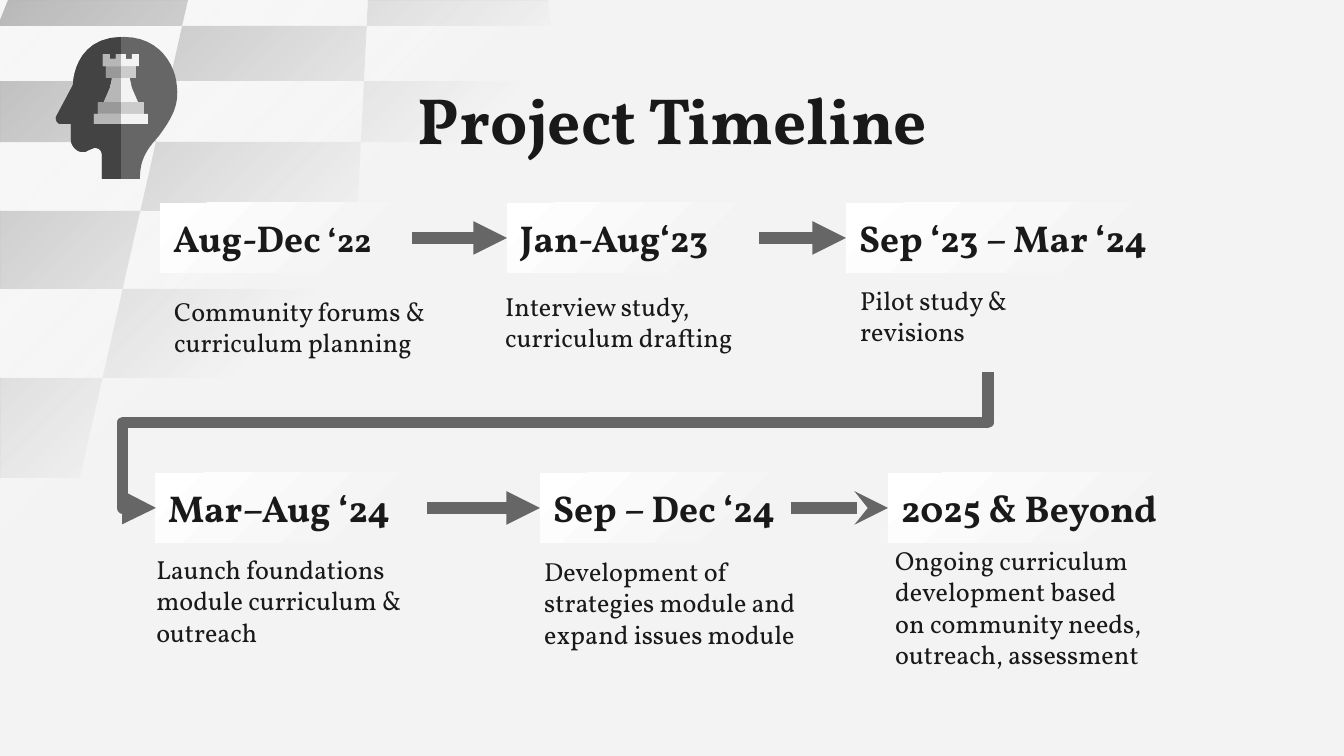
from lxml import etree
from pptx import Presentation
from pptx import util as u
from pptx.dml.color import RGBColor
from pptx.enum import shapes, text
from pptx.oxml.ns import qn

PX = 9144000 / 1344
FONT = "Vollkorn"
INK, LINE, PALE, WHITE = "191919", "666666", "F3F3F3", "FFFFFF"


def px(value):
    return u.Emu(round(value * PX))


def color(value):
    return RGBColor.from_string(value)


deck = Presentation()
deck.slide_width, deck.slide_height = px(1344), px(756)
page = deck.slides.add_slide(deck.slide_layouts[6])
page.background.fill.solid()
page.background.fill.fore_color.rgb = color(PALE)
outlines = []

# Chessboard in perspective: column lines spread out as the rows go down
rows = [0, 26, 81, 142, 211, 289, 378, 478]
for row, (top, bottom) in enumerate(zip(rows, rows[1:])):
    for column in range(-2 + row % 2, 1, 2):
        corners = [(column, top), (column, bottom), (column + 1, bottom), (column + 1, top)]
        tile = [(368 - 0.05 * y + k * (180 + 0.176 * y), y) for k, y in corners]
        outlines.append((tile, "999999"))
tile_count = len(outlines)

# Head: a pair is a corner, a triple of pairs is a Bezier curve
face = [
    (102, 179), (102, 156), ((102, 150), (99, 148), (94, 148)),
    (87, 151), ((86, 152), (85, 152), (82, 152)), ((77, 152), (71, 146), (71, 140)),
    (71, 124), (60, 124), ((58, 124), (55, 120), (56, 117)), (73, 85),
]
back = [
    (124, 37), ((160, 37), (176, 66), (177, 87)),
    ((179, 106), (172, 118), (159, 136)), ((144, 152), (140, 163), (140, 179)),
]
head = back + face + [((73, 85), (73, 37), (124, 37))]
profile = [(121, 37), (121, 179)] + face + [((73, 85), (73, 38), (121, 37))]
for curves, shade in ((head, LINE), (profile, "434343")):
    points = []
    for part in curves:
        if len(part) == 2:
            points.append(part)
            continue
        controls = [points[-1], *part]
        for step in range(1, 13):
            t = step / 12
            weights = [(1 - t) ** 3, 3 * t * (1 - t) ** 2, 3 * t * t * (1 - t), t ** 3]
            points.append(tuple(sum(w * c[axis] for w, c in zip(weights, controls))
                                for axis in (0, 1)))
    outlines.append((points, shade))

# Rook: each left half is mirrored about x = 121 for the full piece
rook = [
    ([(121, 71), (112, 71), (112, 79), (110, 88), (104, 102), (103, 107), (121, 107)],
     PALE, "B7B7B7"),
    ([(121, 102), (98, 102), (98, 114), (121, 114)], "CCCCCC", "999999"),
    ([(121, 114), (94, 114), (94, 124), (121, 124)], PALE, "B7B7B7"),
    ([(121, 66), (106, 66), (106, 78), (121, 78)], "CCCCCC", "999999"),
    ([(121, 54), (116, 54), (116, 59), (110, 59), (110, 54), (103, 54), (103, 66), (121, 66)],
     PALE, "B7B7B7"),
]
for half, light, dark in rook:
    mirrored = [(242 - x, y) for x, y in reversed(half)]
    outlines += [(half + mirrored, light), (half, dark)]

for index, (points, shade) in enumerate(outlines):
    if index == tile_count:
        # Veil that fades the board into the background
        veil = page.shapes.add_shape(shapes.MSO_SHAPE.RECTANGLE, 0, 0, px(1344), px(756))
        veil.shadow.inherit = False
        veil.line.fill.background()
        veil.fill.gradient()
        veil.fill.gradient_angle = 315
        for stop, shade_stop, position in zip(veil.fill.gradient_stops, (WHITE, PALE), (0, 0.29)):
            stop.color.rgb = color(shade_stop)
            stop.position = position
        clear = next(veil._element.iter(qn("a:srgbClr")))
        etree.SubElement(clear, qn("a:alpha")).set("val", "30000")
    spots = [(px(x), px(y)) for x, y in points]
    builder = page.shapes.build_freeform(*spots[0], scale=1.0)
    builder.add_line_segments(spots[1:], close=True)
    outline = builder.convert_to_shape()
    outline.shadow.inherit = False
    outline.fill.solid()
    outline.fill.fore_color.rgb = color(shade)
    outline.line.fill.background()

# Period boxes: left, top, width, runs; then the note's left, top and wording
periods = [
    (160, 203, 252, [("Aug-Dec", 20), (" ‘22", 18)],
     161, 282, "Community forums & curriculum planning"),
    (507, 203, 252, [("Jan-Aug‘23", 20)],
     492, 277, "Interview study, curriculum drafting"),
    (846, 203, 328, [("Sep ‘23 – Mar ‘24", 20)],
     847, 271, "Pilot study & revisions"),
    (155, 473, 272, [("Mar–Aug ‘24", 20)],
     143, 540, "Launch foundations module curriculum & outreach"),
    (540, 473, 251, [("Sep – Dec ‘24", 20)],
     531, 542, "Development of strategies module and expand issues module"),
    (888, 473, 300, [("2025 & Beyond", 20)],
     882, 531, "Ongoing curriculum development based on community needs, outreach, assessment"),
]
title = page.shapes.add_textbox(px(106), px(66), px(1133), px(85))
labels = [(title, [("Project Timeline", 35)], True)]
boxes = []
for left, top, width, runs, note_left, note_top, wording in periods:
    note = page.shapes.add_textbox(px(note_left), px(note_top), px(282), px(101))
    box = page.shapes.add_shape(
        shapes.MSO_SHAPE.RECTANGLE, px(left), px(top), px(width), px(70))
    box.shadow.inherit = False
    box.line.fill.background()
    box.fill.gradient()
    box.fill.gradient_angle = 315
    for stop, shade, position in zip(box.fill.gradient_stops, (WHITE, PALE), (0, 0.86)):
        stop.color.rgb = color(shade)
        stop.position = position
    boxes.append(box)
    labels += [(note, [(wording, 14)], False), (box, runs, True)]

for holder, runs, bold in labels:
    frame = holder.text_frame
    frame.word_wrap = True
    frame.margin_left = frame.margin_right = frame.margin_top = frame.margin_bottom = u.Inches(0.1)
    frame.vertical_anchor = text.MSO_ANCHOR.MIDDLE if holder in boxes else text.MSO_ANCHOR.TOP
    para = frame.paragraphs[0]
    para.alignment = text.PP_ALIGN.CENTER if holder is title else text.PP_ALIGN.LEFT
    for words, size in runs:
        span = para.add_run()
        span.text = words
        span.font.name = FONT
        span.font.size = u.Pt(size)
        span.font.bold = bold
        span.font.color.rgb = color(INK)

# Arrows along each row, and the elbow that returns to the second row
arrows = []
for start, head_kind in ((0, "triangle"), (1, "triangle"), (3, "triangle"), (4, "stealth")):
    arrow = page.shapes.add_connector(shapes.MSO_CONNECTOR.STRAIGHT, 0, 0, 0, 0)
    arrow.begin_connect(boxes[start], 3)
    arrow.end_connect(boxes[start + 1], 1)
    arrows.append((arrow, head_kind))

elbow = page.shapes.add_connector(
    shapes.MSO_CONNECTOR.ELBOW, px(504), px(24), px(640), px(856))
elbow._element.spPr.find(qn("a:xfrm")).set("rot", "5400000")
geometry = elbow._element.spPr.find(qn("a:prstGeom"))
geometry.set("prst", "bentConnector4")
guides = geometry.find(qn("a:avLst"))
for name, value in (("adj1", 37100), ("adj2", 104000)):
    etree.SubElement(guides, qn("a:gd"), name=name, fmla=f"val {value}")
arrows.append((elbow, "triangle"))

for arrow, head_kind in arrows:
    arrow.line.color.rgb = color(LINE)
    arrow.line.width = u.Pt(6)
    etree.SubElement(arrow.line._get_or_add_ln(), qn("a:tailEnd")).set("type", head_kind)
    etree.SubElement(arrow._element.spPr, qn("a:effectLst"))

deck.save("out.pptx")
